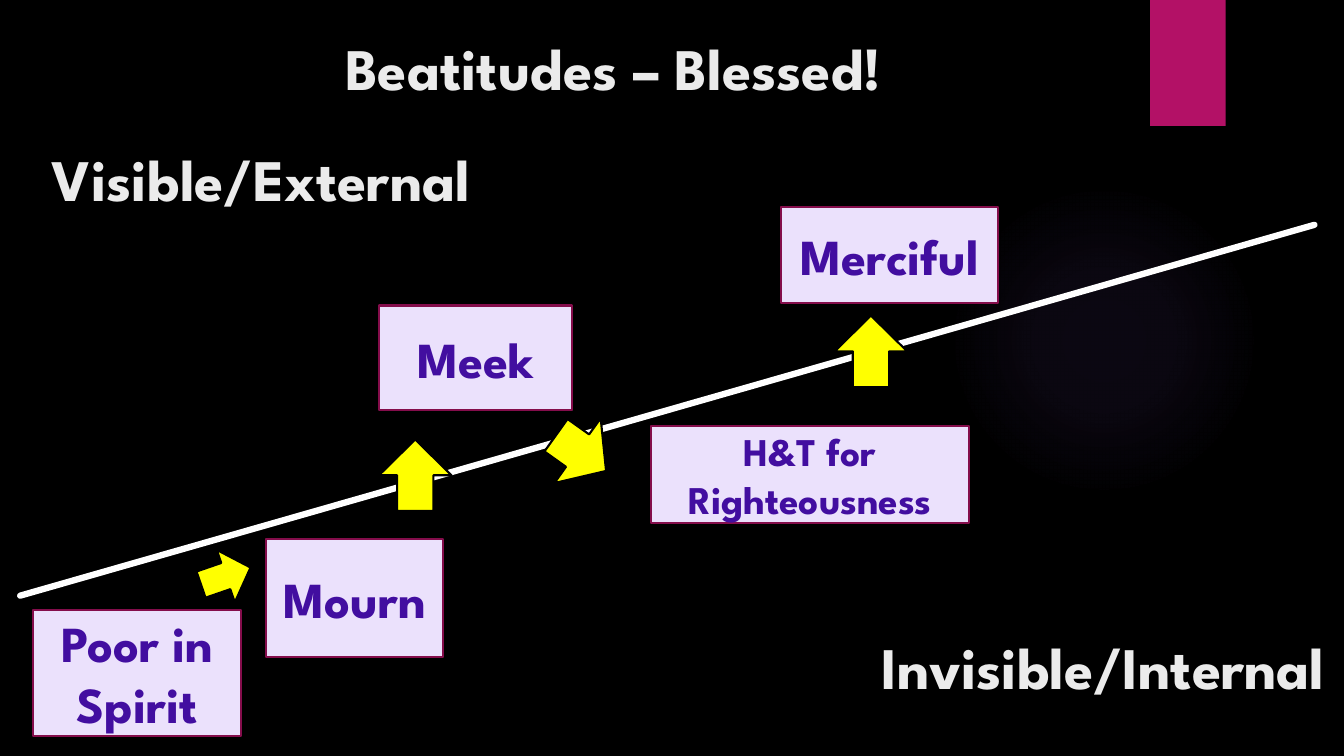
from dataclasses import dataclass

from lxml import etree
from pptx import Presentation
from pptx.dml.color import RGBColor
from pptx.enum.shapes import MSO_CONNECTOR, MSO_SHAPE
from pptx.enum.text import MSO_ANCHOR, PP_ALIGN
from pptx.oxml import parse_xml
from pptx.oxml.ns import nsdecls, qn
from pptx.shapes.autoshape import Shape
from pptx.slide import Slide
from pptx.text.text import TextFrame
from pptx.util import Pt

RECTANGLE = MSO_SHAPE.RECTANGLE
ELLIPSE = MSO_SHAPE.OVAL
RIGHT_ARROW = MSO_SHAPE.RIGHT_ARROW
UP_ARROW = MSO_SHAPE.UP_ARROW
STRAIGHT = MSO_CONNECTOR.STRAIGHT
CENTER = PP_ALIGN.CENTER
RIGHT = PP_ALIGN.RIGHT
TOP = MSO_ANCHOR.TOP
MIDDLE = MSO_ANCHOR.MIDDLE

FONT = "League Spartan"
BLACK = "000000"
WHITE = "FFFFFF"
HEADING_COLOR = "EBEBEB"
MAGENTA = "B31166"
BOX_FILL = "EBE1FC"
BOX_LINE = "840D4B"
BOX_TEXT = "420EA0"
YELLOW = "FFFF00"
GLOW_COLOR = "9B6BF2"
GLOW_STOPS = ((0, 7), (36, 6), (69, 0))


@dataclass(frozen=True)
class Area:
    left: float
    top: float
    width: float
    height: float

    def lengths(self) -> tuple[Pt, Pt, Pt, Pt]:
        return Pt(self.left), Pt(self.top), Pt(self.width), Pt(self.height)


@dataclass(frozen=True)
class Heading:
    text: str
    area: Area
    alignment: PP_ALIGN = CENTER


@dataclass(frozen=True)
class Beatitude:
    text: str
    area: Area
    size: float = 36


@dataclass(frozen=True)
class Arrow:
    kind: MSO_SHAPE
    area: Area
    rotation: float = 0
    head: float = 0.5


TITLE = Heading("Beatitudes – Blessed! ", Area(73.4, 19.4, 740.9, 110.2))
INVISIBLE = Heading("Invisible/Internal", Area(583.9, 447.1, 369.4, 110.2), RIGHT)
VISIBLE = Heading("Visible/External", Area(4.3, 98.6, 364.3, 110.2))

BEATITUDES = (
    Beatitude("Poor in Spirit", Area(23.8, 435.6, 148.3, 90)),
    Beatitude("Mourn", Area(190.1, 385.2, 126.7, 84.2)),
    Beatitude("Meek", Area(270.7, 218.2, 138.2, 74.9)),
    Beatitude("H&T for\nRighteousness", Area(465.1, 304.6, 226.8, 69.1), 28),
    Beatitude("Merciful", Area(558, 147.6, 154.8, 69.1)),
)

ARROWS = (
    Arrow(RIGHT_ARROW, Area(393.1, 295.2, 43.9, 56.9), 35.5, 0.57),
    Arrow(RIGHT_ARROW, Area(142.6, 391.7, 37.4, 39.6), 341),
    Arrow(UP_ARROW, Area(596.2, 225.4, 51.8, 51.1)),
    Arrow(UP_ARROW, Area(270.7, 313.9, 51.8, 51.1)),
)


def color(value: str) -> RGBColor:
    return RGBColor.from_string(value)


def add_filled_shape(
    slide: Slide, kind: MSO_SHAPE, area: Area, fill: str, line: str | None = None
) -> Shape:
    shape = slide.shapes.add_shape(kind, *area.lengths())
    shape.shadow.inherit = False
    shape.fill.solid()
    shape.fill.fore_color.rgb = color(fill)
    if line is None:
        shape.line.fill.background()
    else:
        shape.line.color.rgb = color(line)
        shape.line.width = Pt(1.5)
    return shape


def write_text(
    text_frame: TextFrame, text: str, size: float, text_color: str,
    alignment: PP_ALIGN, anchor: MSO_ANCHOR,
) -> None:
    text_frame.word_wrap = True
    text_frame.vertical_anchor = anchor
    text_frame.text = text
    for paragraph in text_frame.paragraphs:
        paragraph.alignment = alignment
        for run in paragraph.runs:
            run.font.name = FONT
            run.font.size = Pt(size)
            run.font.bold = True
            run.font.color.rgb = color(text_color)


def add_heading(slide: Slide, heading: Heading) -> None:
    shape = slide.shapes.add_textbox(*heading.area.lengths())
    write_text(shape.text_frame, heading.text, 42, HEADING_COLOR, heading.alignment, TOP)


def add_beatitude(slide: Slide, beatitude: Beatitude) -> None:
    shape = add_filled_shape(slide, RECTANGLE, beatitude.area, BOX_FILL, BOX_LINE)
    write_text(shape.text_frame, beatitude.text, beatitude.size, BOX_TEXT, CENTER, MIDDLE)


def add_arrow(slide: Slide, arrow: Arrow) -> None:
    shape = add_filled_shape(slide, arrow.kind, arrow.area, YELLOW, BLACK)
    shape.rotation = arrow.rotation
    shape.adjustments[1] = arrow.head


def add_glow(slide: Slide, area: Area) -> None:
    shape = add_filled_shape(slide, ELLIPSE, area, GLOW_COLOR)
    stops = "".join(
        f'<a:gs pos="{position * 1000}"><a:srgbClr val="{GLOW_COLOR}">'
        f'<a:alpha val="{opacity * 1000}"/></a:srgbClr></a:gs>'
        for position, opacity in GLOW_STOPS
    )
    gradient = parse_xml(
        f'<a:gradFill {nsdecls("a")} rotWithShape="1"><a:gsLst>{stops}</a:gsLst>'
        '<a:path path="circle"><a:fillToRect l="50000" t="50000" r="50000" b="50000"/>'
        "</a:path></a:gradFill>"
    )
    properties = shape._element.spPr
    properties.replace(properties.find(qn("a:solidFill")), gradient)


def add_dividing_line(slide: Slide) -> None:
    connector = slide.shapes.add_connector(
        STRAIGHT, Pt(14.4), Pt(425.5), Pt(938.9), Pt(160.6)
    )
    connector.line.color.rgb = color(WHITE)
    connector.line.width = Pt(4.5)
    connector.line._get_or_add_ln().set("cap", "rnd")
    etree.SubElement(connector._element.spPr, qn("a:effectLst"))


def main() -> None:
    presentation = Presentation()
    presentation.slide_width = Pt(960)
    presentation.slide_height = Pt(540)
    slide = presentation.slides.add_slide(presentation.slide_layouts[6])
    slide.background.fill.solid()
    slide.background.fill.fore_color.rgb = color(BLACK)

    add_glow(slide, Area(677.5, 131.8, 221.8, 221.8))
    add_filled_shape(slide, RECTANGLE, Area(821.5, 0, 54, 90), MAGENTA)
    add_heading(slide, TITLE)
    add_dividing_line(slide)
    for beatitude in BEATITUDES:
        add_beatitude(slide, beatitude)
    add_heading(slide, INVISIBLE)
    for arrow in ARROWS:
        add_arrow(slide, arrow)
    add_heading(slide, VISIBLE)
    presentation.save("out.pptx")


if __name__ == "__main__":
    main()
